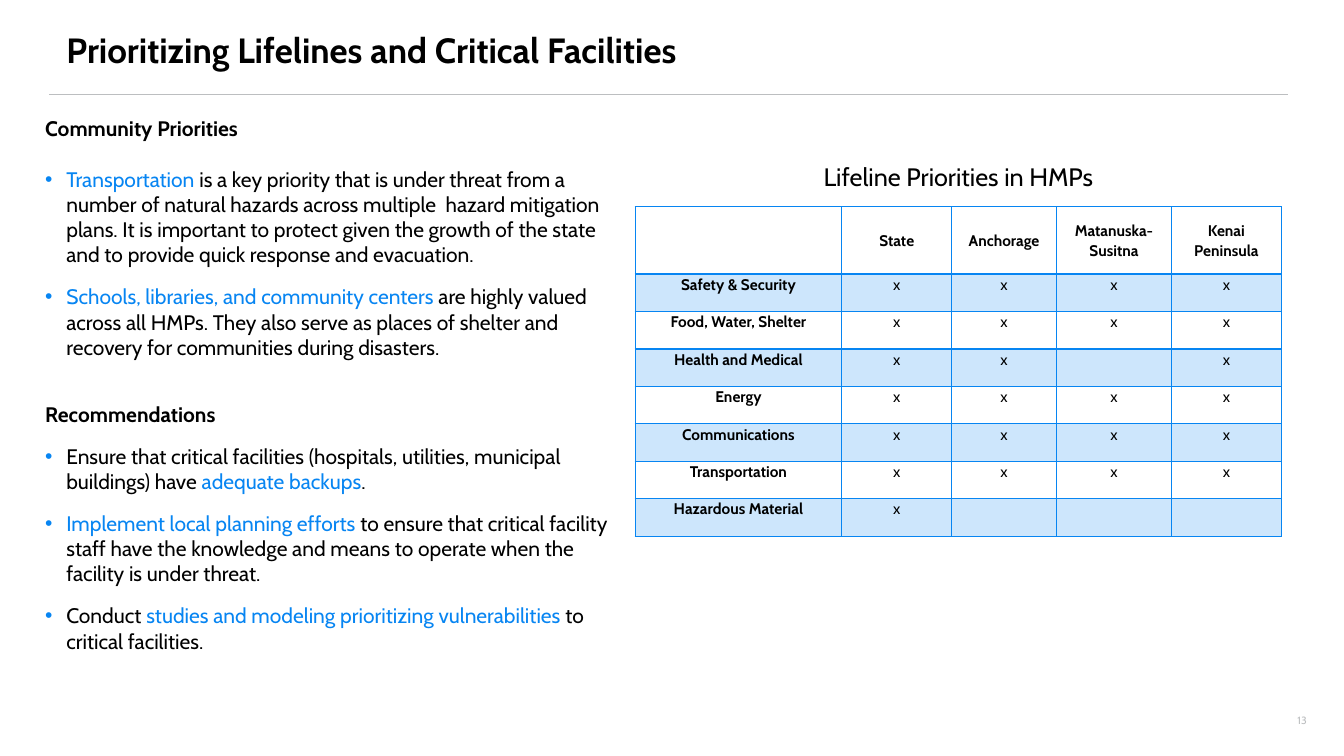
from lxml import etree
from pptx import Presentation
from pptx.dml.color import RGBColor
from pptx.enum.text import MSO_ANCHOR as Anchor, PP_ALIGN as Align
from pptx.oxml.ns import qn
from pptx.util import Inches, Pt

FONT = "Cabin"
COLORS = {"text": "000000", "accent": "0785F2", "muted": "BCBEC0"}

TITLE = "Prioritizing Lifelines and Critical Facilities"
PAGE_NUMBER = "13"
TABLE_TITLE = "Lifeline Priorities in HMPs"

# Each section: heading, space before and after it, bullets as (text, highlighted) runs
SECTIONS = [
    ("Community Priorities", 0, 18, [
        [("Transportation", True),
         (" is a key priority that is under threat from a number of natural hazards across "
          "multiple  hazard mitigation plans. It is important to protect given the growth of "
          "the state and to provide quick response and evacuation.", False)],
        [("Schools, libraries, and community centers", True),
         (" are highly valued across all HMPs. They also serve as places of shelter and "
          "recovery for communities during disasters.", False)],
    ]),
    ("Recommendations", 18, 12, [
        [("Ensure that critical facilities (hospitals, utilities, municipal buildings) have ",
          False), ("adequate backups", True), (".", False)],
        [("Implement local planning efforts", True),
         (" to ensure that critical facility staff have the knowledge and means to operate "
          "when the facility is under threat.", False)],
        [("Conduct ", False), ("studies and modeling prioritizing vulnerabilities", True),
         (" to critical facilities.", False)],
    ]),
]

REGIONS = ["State", "Anchorage", "Matanuska-Susitna", "Kenai Peninsula"]
PRIORITIES = {
    "Safety & Security": REGIONS,
    "Food, Water, Shelter": REGIONS,
    "Health and Medical": ["State", "Anchorage", "Kenai Peninsula"],
    "Energy": REGIONS,
    "Communications": REGIONS,
    "Transportation": REGIONS,
    "Hazardous Material": ["State"],
}

SLIDE_WIDTH, SLIDE_HEIGHT = 13.33, 7.5
TABLE_LEFT, TABLE_TOP = 6.3, 2.05
COLUMN_WIDTHS = [2.05, 1.09, 1.04, 1.14, 1.09]
TABLE_WIDTH = sum(COLUMN_WIDTHS)
HEADER_HEIGHT, TABLE_HEIGHT = 0.67, 3.27
ROW_HEIGHT = (TABLE_HEIGHT - HEADER_HEIGHT) / len(PRIORITIES)
BULLET_INDENT = 0.21


def add_run(paragraph, text, size, color="text", bold=False):
    run = paragraph.add_run()
    run.text = text
    run.font.name = FONT
    run.font.size = Pt(size)
    run.font.bold = bold
    run.font.color.rgb = RGBColor.from_string(COLORS[color])


def add_text_box(slide, left, top, width, height, anchor=Anchor.TOP):
    box = slide.shapes.add_textbox(*map(Inches, (left, top, width, height)))
    box.text_frame.word_wrap = True
    box.text_frame.vertical_anchor = anchor
    return box.text_frame


def add_solid_fill(parent, color, alpha=100):
    fill = etree.SubElement(parent, qn("a:solidFill"))
    value = etree.SubElement(fill, qn("a:srgbClr"), val=COLORS[color])
    if alpha < 100:
        etree.SubElement(value, qn("a:alpha"), val=str(alpha * 1000))


def add_bullet(paragraph):
    properties = paragraph._p.get_or_add_pPr()
    indent = Inches(BULLET_INDENT)
    properties.set("marL", str(indent))
    properties.set("indent", str(-indent))
    color = etree.SubElement(properties, qn("a:buClr"))
    etree.SubElement(color, qn("a:srgbClr"), val=COLORS["accent"])
    etree.SubElement(properties, qn("a:buFont"), typeface="Arial")
    etree.SubElement(properties, qn("a:buChar"), char="•")


def style_cell(cell, row):
    """Set borders, a thicker rule below the header, and shading on odd rows."""
    cell.margin_left = cell.margin_right = Inches(0.07)
    cell.margin_top = cell.margin_bottom = 0
    cell.vertical_anchor = Anchor.MIDDLE if row == 0 else Anchor.TOP
    properties = cell._tc.get_or_add_tcPr()
    for side in "LRTB":
        thick = (row, side) in ((0, "B"), (1, "T"))
        border = etree.SubElement(properties, qn("a:ln" + side), w=str(Pt(2 if thick else 1)))
        add_solid_fill(border, "accent")
    if row % 2:
        add_solid_fill(properties, "accent", alpha=20)
    else:
        cell.fill.background()


def add_header(slide):
    rule = slide.shapes.add_connector(
        1, Inches(0.49), Inches(0.94), Inches(12.77), Inches(0.94))
    rule.line.color.rgb = RGBColor.from_string(COLORS["muted"])
    rule.line.width = Pt(0.5)
    etree.SubElement(rule._element.spPr, qn("a:effectLst"))

    frame = add_text_box(slide, 0.66, 0.1, 11.7, 0.83, Anchor.MIDDLE)
    frame.margin_left = frame.margin_right = 0
    frame.paragraphs[0].line_spacing = 0.9
    add_run(frame.paragraphs[0], TITLE, 25, bold=True)


def add_sections(slide):
    frame = add_text_box(slide, 0.35, 1.1, 5.8, 5.48)
    paragraph = frame.paragraphs[0]
    for number, (heading, before, after, bullets) in enumerate(SECTIONS):
        if number:
            paragraph = frame.add_paragraph()
            paragraph.space_before = Pt(before)
        paragraph.space_after = Pt(after)
        add_run(paragraph, heading, 15, bold=True)
        for runs in bullets:
            paragraph = frame.add_paragraph()
            paragraph.space_after = Pt(12)
            add_bullet(paragraph)
            for text, highlighted in runs:
                add_run(paragraph, text, 15, "accent" if highlighted else "text")


def add_priority_table(slide):
    caption = add_text_box(slide, TABLE_LEFT, 1.55, TABLE_WIDTH, 0.4).paragraphs[0]
    caption.alignment = Align.CENTER
    add_run(caption, TABLE_TITLE, 18)

    rows = [["", *REGIONS]]
    for lifeline, chosen in PRIORITIES.items():
        rows.append([lifeline] + ["x" if region in chosen else "" for region in REGIONS])
    table = slide.shapes.add_table(
        len(rows), len(COLUMN_WIDTHS), Inches(TABLE_LEFT), Inches(TABLE_TOP),
        Inches(TABLE_WIDTH), Inches(TABLE_HEIGHT)).table
    table.first_row = table.horz_banding = False
    for column, width in zip(table.columns, COLUMN_WIDTHS):
        column.width = Inches(width)
    for row, values in enumerate(rows):
        table.rows[row].height = Inches(ROW_HEIGHT if row else HEADER_HEIGHT)
        for column, text in enumerate(values):
            cell = table.cell(row, column)
            style_cell(cell, row)
            if text:
                paragraph = cell.text_frame.paragraphs[0]
                paragraph.alignment = Align.CENTER
                paragraph.line_spacing = 1.07
                add_run(paragraph, text, 11, bold=row == 0 or column == 0)


def add_page_number(slide):
    paragraph = add_text_box(slide, 10.42, 6.95, 2.64, 0.4, Anchor.MIDDLE).paragraphs[0]
    paragraph.alignment = Align.RIGHT
    add_run(paragraph, PAGE_NUMBER, 7.5, "muted")


def main():
    presentation = Presentation()
    presentation.slide_width = Inches(SLIDE_WIDTH)
    presentation.slide_height = Inches(SLIDE_HEIGHT)
    slide = presentation.slides.add_slide(presentation.slide_layouts[6])
    add_header(slide)
    add_page_number(slide)
    add_priority_table(slide)
    add_sections(slide)
    presentation.save("out.pptx")


if __name__ == "__main__":
    main()
